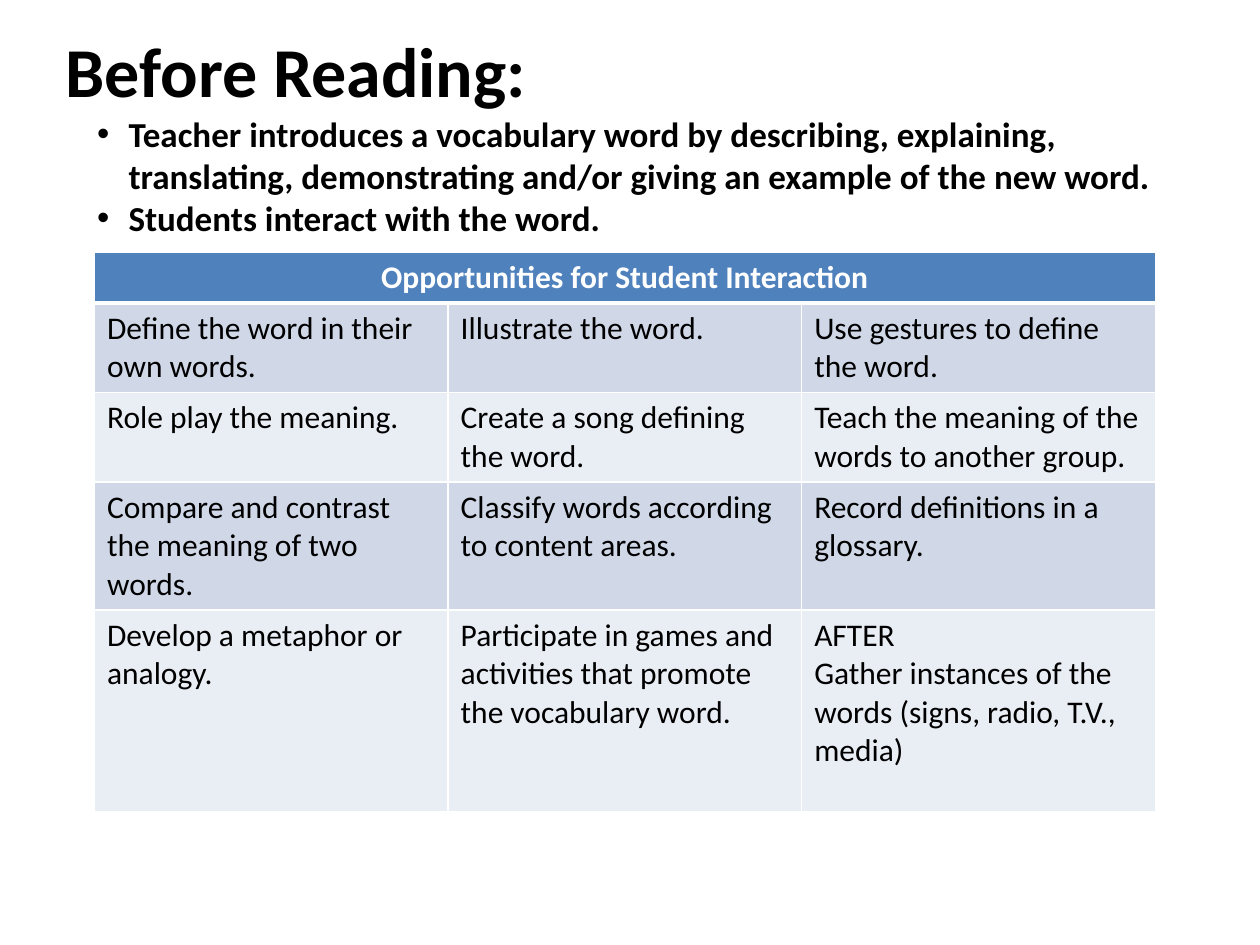
from dataclasses import dataclass

from lxml import etree
from pptx import Presentation
from pptx.dml.color import RGBColor
from pptx.enum.text import MSO_ANCHOR, MSO_AUTO_SIZE, PP_ALIGN
from pptx.oxml.ns import qn
from pptx.util import Inches, Pt

LEFT, CENTER = PP_ALIGN.LEFT, PP_ALIGN.CENTER
TOP = MSO_ANCHOR.TOP
NO_AUTOFIT = MSO_AUTO_SIZE.NONE
TITLE_AND_CONTENT = 1


@dataclass(frozen=True)
class Theme:
    font: str = "Calibri"
    title_size: int = 40
    list_size: int = 20
    table_size: int = 18
    text: str = "000000"
    light: str = "FFFFFF"
    header: str = "4F81BD"
    bands: tuple = ("D0D8E8", "E9EDF4")
    border: int = 1
    header_border: int = 3


THEME = Theme()
TEXT_LEFT, TEXT_WIDTH = 0.42, 9.33
TITLE_TOP, LIST_TOP = 0.17, 0.84
TABLE_LEFT, TABLE_TOP, TABLE_WIDTH = 0.75, 2, 8.42
LINE_HEIGHT, CELL_PADDING = 0.3, 0.1

TITLE = "Before Reading:"
STEPS = [
    "Teacher introduces a vocabulary word by describing, explaining, translating, "
    "demonstrating and/or giving an example of the new word.",
    "Students interact with the word.",
]
TABLE_HEADING = "Opportunities for Student Interaction"
OPPORTUNITIES = [
    ("Define the word in their own words.",
     "Illustrate the word.",
     "Use gestures to define the word."),
    ("Role play the meaning.",
     "Create a song defining the word.",
     "Teach the meaning of the words to another group."),
    ("Compare and contrast the meaning of two words.",
     "Classify words according to content areas.",
     "Record definitions in a glossary."),
    ("Develop a metaphor or analogy.",
     "Participate in games and activities that promote the vocabulary word.",
     "AFTER\nGather instances of the words (signs, radio, T.V., media)"),
]
ROW_LINES = [1, 2, 2, 3, 5]


def format_text(text_frame, size, color, bold, alignment=LEFT):
    for paragraph in text_frame.paragraphs:
        paragraph.alignment = alignment
        paragraph.space_before = Pt(0)
        for run in paragraph.runs:
            run.font.name = THEME.font
            run.font.size = Pt(size)
            run.font.bold = bold
            run.font.color.rgb = RGBColor.from_string(color)


def fill_placeholder(shape, text, top, height, size):
    shape.left, shape.top = Inches(TEXT_LEFT), Inches(top)
    shape.width, shape.height = Inches(TEXT_WIDTH), Inches(height)
    text_frame = shape.text_frame
    text_frame.text = text
    text_frame.word_wrap = True
    text_frame.auto_size = NO_AUTOFIT
    text_frame.vertical_anchor = TOP
    format_text(text_frame, size, THEME.text, True)


def indent_list(shape):
    for paragraph in shape.text_frame.paragraphs:
        properties = paragraph._p.get_or_add_pPr()
        properties.set("marL", str(Inches(0.5)))
        properties.set("indent", str(-Inches(0.25)))


def set_borders(cell, top, bottom):
    properties = cell._tc.get_or_add_tcPr()
    widths = {"L": THEME.border, "R": THEME.border, "T": top, "B": bottom}
    for position, (side, width) in enumerate(widths.items()):
        line = etree.Element(qn(f"a:ln{side}"), w=str(Pt(width)))
        fill = etree.SubElement(line, qn("a:solidFill"))
        etree.SubElement(fill, qn("a:srgbClr"), val=THEME.light)
        properties.insert(position, line)


def fill_cell(cell, text, row):
    is_header = row == 0
    cell.text = text
    cell.fill.solid()
    background = THEME.header if is_header else THEME.bands[(row - 1) % 2]
    cell.fill.fore_color.rgb = RGBColor.from_string(background)
    color = THEME.light if is_header else THEME.text
    format_text(cell.text_frame, THEME.table_size, color, is_header,
                CENTER if is_header else LEFT)
    set_borders(cell,
                THEME.header_border if row == 1 else THEME.border,
                THEME.header_border if is_header else THEME.border)


def add_opportunities_table(slide):
    heights = [lines * LINE_HEIGHT + CELL_PADDING for lines in ROW_LINES]
    column_count = len(OPPORTUNITIES[0])
    table = slide.shapes.add_table(
        len(heights), column_count, Inches(TABLE_LEFT), Inches(TABLE_TOP),
        Inches(TABLE_WIDTH), Inches(sum(heights))).table
    for table_row, height in zip(table.rows, heights):
        table_row.height = Inches(height)
    table.cell(0, 0).merge(table.cell(0, column_count - 1))
    headings = (TABLE_HEADING,) + ("",) * (column_count - 1)
    for row, texts in enumerate([headings, *OPPORTUNITIES]):
        for column, text in enumerate(texts):
            fill_cell(table.cell(row, column), text, row)


def main():
    presentation = Presentation()
    presentation.slide_width = Inches(10)
    presentation.slide_height = Inches(7.5)
    slide = presentation.slides.add_slide(presentation.slide_layouts[TITLE_AND_CONTENT])
    fill_placeholder(slide.shapes.title, TITLE, TITLE_TOP,
                     LIST_TOP - TITLE_TOP, THEME.title_size)
    steps = slide.placeholders[1]
    fill_placeholder(steps, "\n".join(STEPS), LIST_TOP,
                     TABLE_TOP - LIST_TOP, THEME.list_size)
    indent_list(steps)
    add_opportunities_table(slide)
    presentation.save("out.pptx")


if __name__ == "__main__":
    main()
